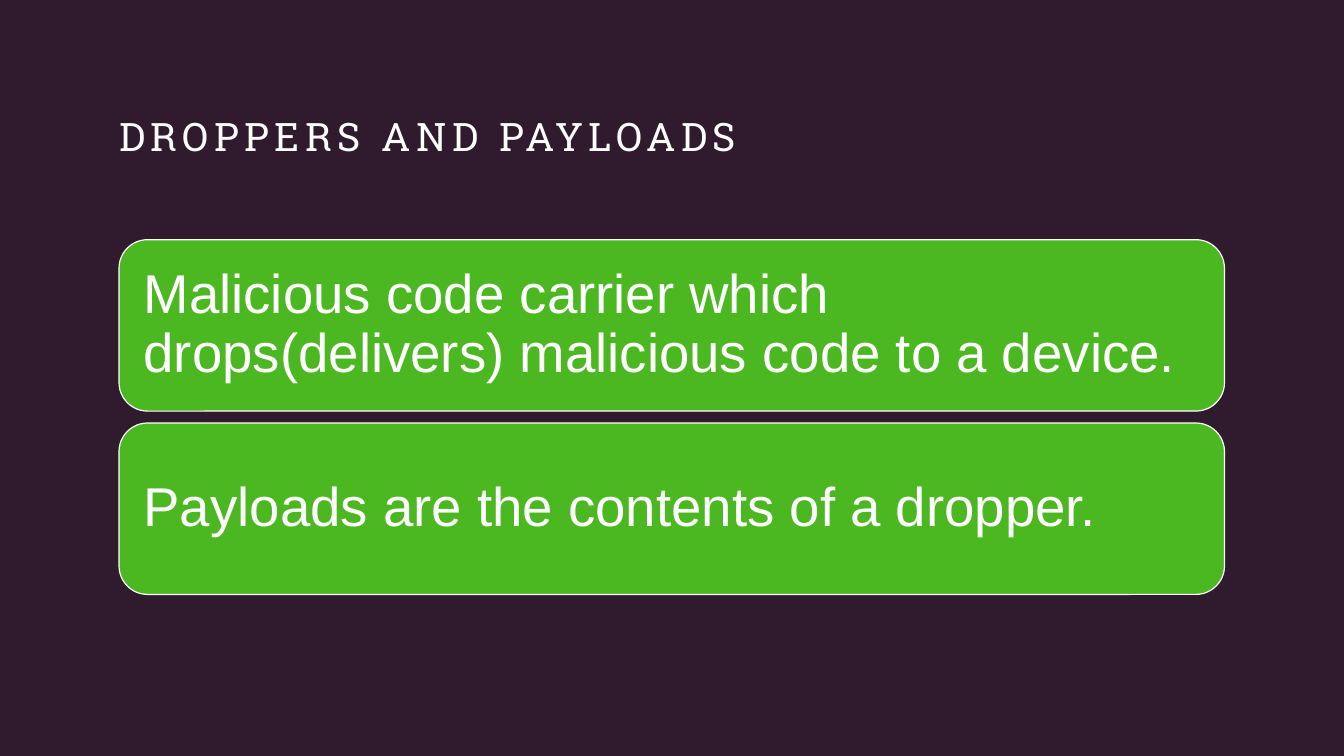
"""Build the slide on droppers and payloads."""
import pptx
import pptx.util
import pptx.dml.color
import pptx.enum.shapes
import pptx.enum.text

Cm, Pt = pptx.util.Cm, pptx.util.Pt
RGBColor = pptx.dml.color.RGBColor
ANCHOR = pptx.enum.text.MSO_ANCHOR
ALIGN = pptx.enum.text.PP_ALIGN

TITLE = "DROPPERS AND PAYLOADS"
CARDS = [
    "Malicious code carrier which drops(delivers) malicious code to a device.",
    "Payloads are the contents of a dropper.",
]

PLUM = RGBColor(0x30, 0x1B, 0x2E)
GREEN = RGBColor(0x4C, 0xB8, 0x21)
WHITE = RGBColor(0xFF, 0xFF, 0xFF)

LEFT, WIDTH = 3.0, 27.86
TOP, HEIGHT, STEP = 6.04, 4.32, 4.62


def write(shape, text, face, size, inset, anchor):
    """Put one left-aligned paragraph in a shape and return it."""
    frame = shape.text_frame
    frame.word_wrap = True
    frame.vertical_anchor = anchor
    frame.margin_left = frame.margin_right = Cm(inset)
    frame.margin_top = frame.margin_bottom = Cm(inset)
    para = frame.paragraphs[0]
    para.text = text
    para.alignment = ALIGN.LEFT
    para.font.name = face
    para.font.size = Pt(size)
    para.font.color.rgb = WHITE
    return para


def main():
    """Draw the title and the cards, then save."""
    deck = pptx.Presentation()
    deck.slide_width, deck.slide_height = Cm(33.87), Cm(19.05)
    slide = deck.slides.add_slide(deck.slide_layouts[6])
    slide.background.fill.solid()
    slide.background.fill.fore_color.rgb = PLUM

    title = slide.shapes.add_textbox(Cm(LEFT), Cm(2.82), Cm(WIDTH), Cm(1.83))
    para = write(title, TITLE, "Roboto Slab", 28, 0, ANCHOR.TOP)
    para.runs[0].font._element.set("spc", "400")

    for row, text in enumerate(CARDS):
        card = slide.shapes.add_shape(
            pptx.enum.shapes.MSO_SHAPE.ROUNDED_RECTANGLE,
            Cm(LEFT), Cm(TOP + row * STEP), Cm(WIDTH), Cm(HEIGHT))
        card.shadow.inherit = False
        card.fill.solid()
        card.fill.fore_color.rgb = GREEN
        card.line.color.rgb = WHITE
        card.line.width = Pt(0.85)
        para = write(card, text, "Arial", 39, 0.41, ANCHOR.MIDDLE)
        para.line_spacing = 0.9

    deck.save("out.pptx")


if __name__ == "__main__":
    main()
